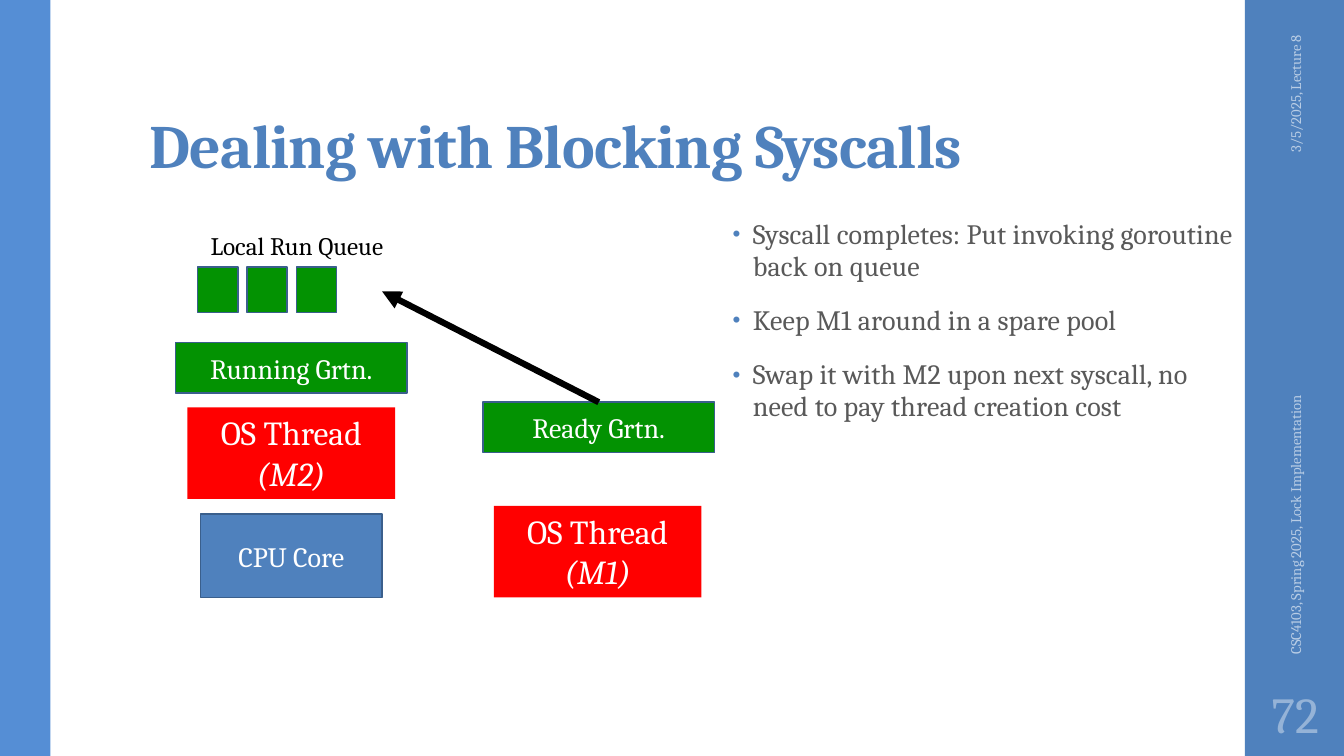
"""Builds a slide on how a scheduler deals with blocking system calls."""
from dataclasses import dataclass, field
from typing import Any

from lxml import etree
from pptx import Presentation
from pptx import util as u
from pptx.dml.color import RGBColor
from pptx.enum import shapes as sh, text as tx
from pptx.oxml import ns

Pt = u.Pt
LEFT, MID, RIGHT = tx.PP_ALIGN.LEFT, tx.PP_ALIGN.CENTER, tx.PP_ALIGN.RIGHT
TOP, CTR, BASE = tx.MSO_ANCHOR.TOP, tx.MSO_ANCHOR.MIDDLE, tx.MSO_ANCHOR.BOTTOM
FACE = "Cambria"
HUES = {
    "blue": "4F81BD", "sky": "558ED5", "edge": "3A5F8C", "red": "FF0000",
    "green": "039202", "white": "FFFFFF", "black": "000000", "grey": "595959",
    "pale": "B9CDE5", "dim": "95B3D7",
}
POINTS = [
    "Syscall completes: Put invoking goroutine back on queue",
    "Keep M1 around in a spare pool",
    "Swap it with M2 upon next syscall, no need to pay thread creation cost",
]


@dataclass
class Block:
    """A filled rectangle with an optional edge and centred text."""
    box: tuple[float, float, float, float]
    fill: str
    edge: str = ""
    words: str = ""
    slant: str = ""
    size: float = 20
    anchor: Any = CTR


@dataclass
class Label:
    """A free line of text."""
    box: tuple[float, float, float, float]
    words: str
    size: float
    hue: str
    align: Any = LEFT
    frame: dict[str, Any] = field(default_factory=dict)
    turn: float = 0


BARS = [
    Block((889.2, 0, 70.8, 540), "blue"),
    Block((0, 0, 36, 540), "sky"),
]
READY = Block((344.9, 287.3, 165.6, 36), "green", "edge", "Ready Grtn.")
STACK = [
    Block((143.3, 367.2, 129.6, 59.6), "blue", "edge", "CPU Core"),
    Block((133.9, 291, 148.3, 65.4), "red", "", "OS Thread ", "(M2)", 24, TOP),
    Block((352.8, 361.3, 148.3, 65.4), "red", "", "OS Thread\v", "(M1)", 24, TOP),
    Block((125.3, 244.8, 165.6, 36), "green", "edge", "Running Grtn."),
]
QUEUE = [Block((141.1 + 35.3 * i, 190.8, 28.8, 32.4), "green", "edge") for i in range(3)]
HEAD = Label((128.9, 161.3, 166.3, 28.8), "Local Run Queue", 18, "black", MID)
NOTES = [
    Label((850.3, 78.5, 149.8, 28.8), "3/5/2025, Lecture 8", 10.5, "pale", RIGHT,
          {"vertical_anchor": CTR}, 270),
    Label((784.1, 319, 282.2, 28.8), "CSC4103, Spring 2025, Lock Implementation", 10.5,
          "pale", LEFT, {"vertical_anchor": CTR}, 270),
    Label((889.2, 486, 72, 46.8), "72", 36, "dim", MID,
          {"vertical_anchor": CTR, "margin_left": Pt(3.6), "margin_right": Pt(3.6)}),
]


def apply(item: Any, vals: dict[str, Any]) -> None:
    """Set each named attribute on the item."""
    for key, val in vals.items():
        setattr(item, key, val)


def tint(name: str) -> RGBColor:
    """Look up a colour by name."""
    return RGBColor.from_string(HUES[name])


def place(item: Any, box: tuple[float, float, float, float]) -> None:
    """Move and size an item in points."""
    apply(item, dict(zip(("left", "top", "width", "height"), map(Pt, box))))


def write(para: Any, words: str, size: float, hue: str, **vals: Any) -> Any:
    """Add styled text to a paragraph and return its last run."""
    for i, part in enumerate(words.split("\v")):
        if i:
            para.add_line_break()
        if part:
            run = para.add_run()
            run.text = part
            apply(run.font, {"name": FACE, "size": Pt(size), **vals})
            run.font.color.rgb = tint(hue)
    return run


def space(run: Any, gap: int) -> None:
    """Set letter spacing in hundredths of a point."""
    run.font._element.set("spc", str(gap))


def block(tree: Any, item: Block) -> Any:
    """Draw a block."""
    rect = tree.add_shape(sh.MSO_SHAPE.RECTANGLE, *map(Pt, item.box))
    rect.shadow.inherit = False
    rect.fill.solid()
    rect.fill.fore_color.rgb = tint(item.fill)
    if item.edge:
        rect.line.color.rgb = tint(item.edge)
        rect.line.width = Pt(1.1)
    else:
        rect.line.fill.background()
    if item.words:
        apply(rect.text_frame, {"word_wrap": True, "vertical_anchor": item.anchor})
        para = rect.text_frame.paragraphs[0]
        para.alignment = MID
        write(para, item.words, item.size, "white")
        if item.slant:
            write(para, item.slant, item.size, "white", italic=True)
    return rect


def label(tree: Any, item: Label) -> None:
    """Draw a label."""
    area = tree.add_textbox(*map(Pt, item.box))
    area.rotation = item.turn
    apply(area.text_frame, {"word_wrap": True, **item.frame})
    para = area.text_frame.paragraphs[0]
    para.alignment = item.align
    write(para, item.words, item.size, item.hue)


def title(area: Any) -> None:
    """Fill the title."""
    place(area, (99.4, 23, 763.2, 110.2))
    apply(area.text_frame, {"auto_size": tx.MSO_AUTO_SIZE.NONE, "word_wrap": True,
                            "vertical_anchor": BASE, "margin_top": Pt(2.2)})
    para = area.text_frame.paragraphs[0]
    apply(para, {"alignment": LEFT, "line_spacing": 0.9})
    space(write(para, "Dealing with Blocking Syscalls", 44, "blue", bold=True), -50)


def body(area: Any) -> None:
    """Fill the bullet list."""
    place(area, (516.2, 152.6, 372.2, 333.4))
    frame = area.text_frame
    apply(frame, {"auto_size": tx.MSO_AUTO_SIZE.NONE, "word_wrap": True})
    for i, words in enumerate(POINTS):
        para = frame.add_paragraph() if i else frame.paragraphs[0]
        apply(para, {"line_spacing": 0.95, "space_before": Pt(14), "space_after": Pt(2)})
        space(write(para, words, 20, "grey"), 10)
        prop = para._p.get_or_add_pPr()
        prop.set("marL", str(Pt(14.4)))
        prop.set("indent", str(Pt(-14.4)))
        shade = etree.SubElement(prop, ns.qn("a:buClr"))
        etree.SubElement(shade, ns.qn("a:srgbClr"), val=HUES["blue"])
        etree.SubElement(prop, ns.qn("a:buSzPct"), val="80000")
        etree.SubElement(prop, ns.qn("a:buChar"), char="•")


def arrow(tree: Any, start: Any) -> None:
    """Draw the arrow from the ready goroutine to the queue."""
    line = tree.add_connector(sh.MSO_CONNECTOR.STRAIGHT, *map(Pt, (427.7, 287.3, 272.9, 208.1)))
    line.begin_connect(start, 0)
    line.line.color.rgb = tint("black")
    line.line.width = Pt(4.5)
    prop = line._element.spPr
    etree.SubElement(prop.find(ns.qn("a:ln")), ns.qn("a:tailEnd"), type="triangle")
    etree.SubElement(prop, ns.qn("a:effectLst"))


def main() -> None:
    """Build and save the slide."""
    deck = Presentation()
    apply(deck, {"slide_width": Pt(960), "slide_height": Pt(540)})
    slide = deck.slides.add_slide(deck.slide_layouts[1])
    tree = slide.shapes
    title(tree.title)
    body(slide.placeholders[1])
    for item in BARS + STACK:
        block(tree, item)
    for note in NOTES:
        label(tree, note)
    queue = tree.add_group_shape().shapes
    for item in QUEUE:
        block(queue, item)
    label(queue, HEAD)
    arrow(tree, block(tree, READY))
    deck.save("out.pptx")


if __name__ == "__main__":
    main()
